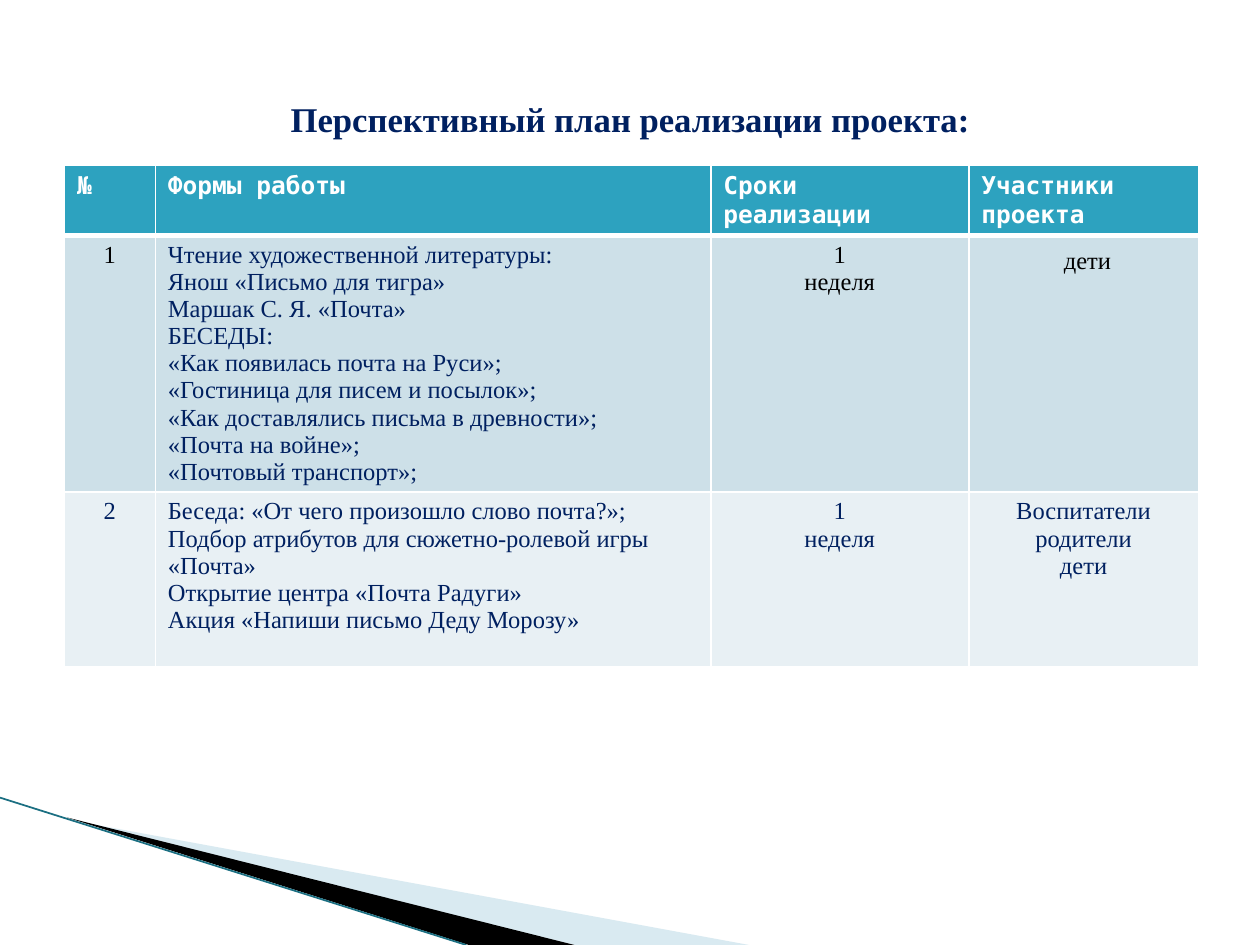
from dataclasses import dataclass

from lxml import etree
from pptx import Presentation
from pptx.dml.color import RGBColor
from pptx.enum.shapes import MSO_CONNECTOR
from pptx.enum.text import MSO_ANCHOR, PP_ALIGN
from pptx.oxml.ns import qn
from pptx.util import Cm, Pt

LEFT, CENTER = PP_ALIGN.LEFT, PP_ALIGN.CENTER
MIDDLE, TOP = MSO_ANCHOR.MIDDLE, MSO_ANCHOR.TOP
STRAIGHT = MSO_CONNECTOR.STRAIGHT
TITLE_ONLY = 5


@dataclass(frozen=True)
class Theme:
    serif: str = "Times New Roman"
    mono: str = "DejaVu Sans Mono"
    navy: str = "002060"
    black: str = "000000"
    white: str = "FFFFFF"
    header: str = "2DA2BF"
    row_fills: tuple = ("CDE0E8", "E8F0F4")
    pale_wedge: str = "A0CBDC"
    edge: str = "1B6F82"
    title_size: float = 19.8
    table_size: float = 14


THEME = Theme()

HEADERS = ("№", "Формы работы", "Сроки реализации", "Участники проекта")
ACTIVITIES = (
    (
        "1",
        "Чтение художественной литературы:\n"
        "Янош «Письмо для тигра»\n"
        "Маршак С. Я. «Почта»\n"
        "БЕСЕДЫ:\n"
        "«Как появилась почта на Руси»;\n"
        "«Гостиница для писем и посылок»;\n"
        "«Как доставлялись письма в древности»;\n"
        "«Почта на войне»;\n"
        "«Почтовый транспорт»;",
        "1\nнеделя",
        "дети",
    ),
    (
        "2",
        "Беседа: «От чего произошло слово почта?»;\n"
        "Подбор атрибутов для сюжетно-ролевой игры «Почта»\n"
        "Открытие центра «Почта Радуги»\n"
        "Акция «Напиши письмо Деду Морозу»",
        "1\nнеделя",
        "Воспитатели\nродители\nдети",
    ),
)
COLUMN_WIDTHS = (1.83, 11.2, 5.2, 4.63)
ROW_HEIGHTS = (1.4, 5.15, 3.53)
FORMS_COLUMN = 1


def rgb(code):
    return RGBColor.from_string(code)


def write(frame, text, font, size, color, bold=False, align=LEFT):
    frame.text = text
    for paragraph in frame.paragraphs:
        paragraph.alignment = align
        for run in paragraph.runs:
            run.font.name = font
            run.font.size = Pt(size)
            run.font.bold = bold
            run.font.color.rgb = rgb(color)


def add_wedge(slide, points, color, opacity=100):
    """Fill the outline through points given in centimetres."""
    start, *rest = [(x * 100, y * 100) for x, y in points]
    builder = slide.shapes.build_freeform(*start, scale=Cm(0.01))
    builder.add_line_segments(rest)
    wedge = builder.convert_to_shape()
    wedge.shadow.inherit = False
    wedge.fill.solid()
    wedge.fill.fore_color.rgb = rgb(color)
    wedge.line.fill.background()
    if opacity < 100:
        tint = next(wedge.element.spPr.iter(qn("a:srgbClr")))
        etree.SubElement(tint, qn("a:alpha"), val=str(opacity * 1000))


def add_corner(slide):
    add_wedge(slide, [(1.4, 16.53), (15.1, 19.05), (11.58, 19.05)],
              THEME.pale_wedge, opacity=40)
    add_wedge(slide, [(1.35, 16.48), (11.58, 19.05), (9.45, 19.05)], THEME.black)
    edge = slide.shapes.add_connector(STRAIGHT, Cm(0), Cm(16.08), Cm(9.4), Cm(19.05))
    edge.line.color.rgb = rgb(THEME.edge)
    edge.line.width = Pt(1)
    etree.SubElement(edge.element.spPr, qn("a:effectLst"))


def add_title(slide):
    title = slide.shapes.title
    title.left, title.top = Cm(1.27), Cm(0.76)
    title.width, title.height = Cm(22.86), Cm(3.18)
    frame = title.text_frame
    frame.vertical_anchor = MIDDLE
    frame.margin_top = Cm(0.23)
    write(frame, "Перспективный план реализации проекта:", THEME.serif,
          THEME.title_size, THEME.navy, bold=True, align=CENTER)


def set_borders(cell, bottom=1):
    properties = cell._tc.get_or_add_tcPr()
    for side, width in (("L", 1), ("R", 1), ("T", 1), ("B", bottom)):
        line = etree.SubElement(properties, qn(f"a:ln{side}"), w=str(Pt(width)))
        fill = etree.SubElement(line, qn("a:solidFill"))
        etree.SubElement(fill, qn("a:srgbClr"), val=THEME.white)


def style_cell(cell, fill, bottom=1):
    set_borders(cell, bottom)
    cell.fill.solid()
    cell.fill.fore_color.rgb = rgb(fill)
    cell.vertical_anchor = TOP


def add_plan(slide):
    frame = slide.shapes.add_table(
        len(ROW_HEIGHTS), len(COLUMN_WIDTHS), Cm(1.3), Cm(3.33),
        Cm(sum(COLUMN_WIDTHS)), Cm(sum(ROW_HEIGHTS)))
    plan = frame.table
    plan.horz_banding = False
    for column, width in zip(plan.columns, COLUMN_WIDTHS):
        column.width = Cm(width)
    for row, height in zip(plan.rows, ROW_HEIGHTS):
        row.height = Cm(height)

    for column, heading in enumerate(HEADERS):
        cell = plan.cell(0, column)
        style_cell(cell, THEME.header, bottom=3)
        write(cell.text_frame, heading, THEME.mono, THEME.table_size,
              THEME.white, bold=True)

    for row, (activity, fill) in enumerate(zip(ACTIVITIES, THEME.row_fills), start=1):
        for column, text in enumerate(activity):
            cell = plan.cell(row, column)
            is_forms = column == FORMS_COLUMN
            color = THEME.black if row == 1 and not is_forms else THEME.navy
            style_cell(cell, fill)
            write(cell.text_frame, text, THEME.serif, THEME.table_size, color,
                  align=LEFT if is_forms else CENTER)

    children_only = plan.cell(1, 3)
    children_only.margin_top = Cm(0.25)
    children_only.margin_left = Cm(0.41)


def main():
    presentation = Presentation()
    presentation.slide_width, presentation.slide_height = Cm(25.4), Cm(19.05)
    slide = presentation.slides.add_slide(presentation.slide_layouts[TITLE_ONLY])
    add_corner(slide)
    add_title(slide)
    add_plan(slide)
    presentation.save("out.pptx")


if __name__ == "__main__":
    main()
